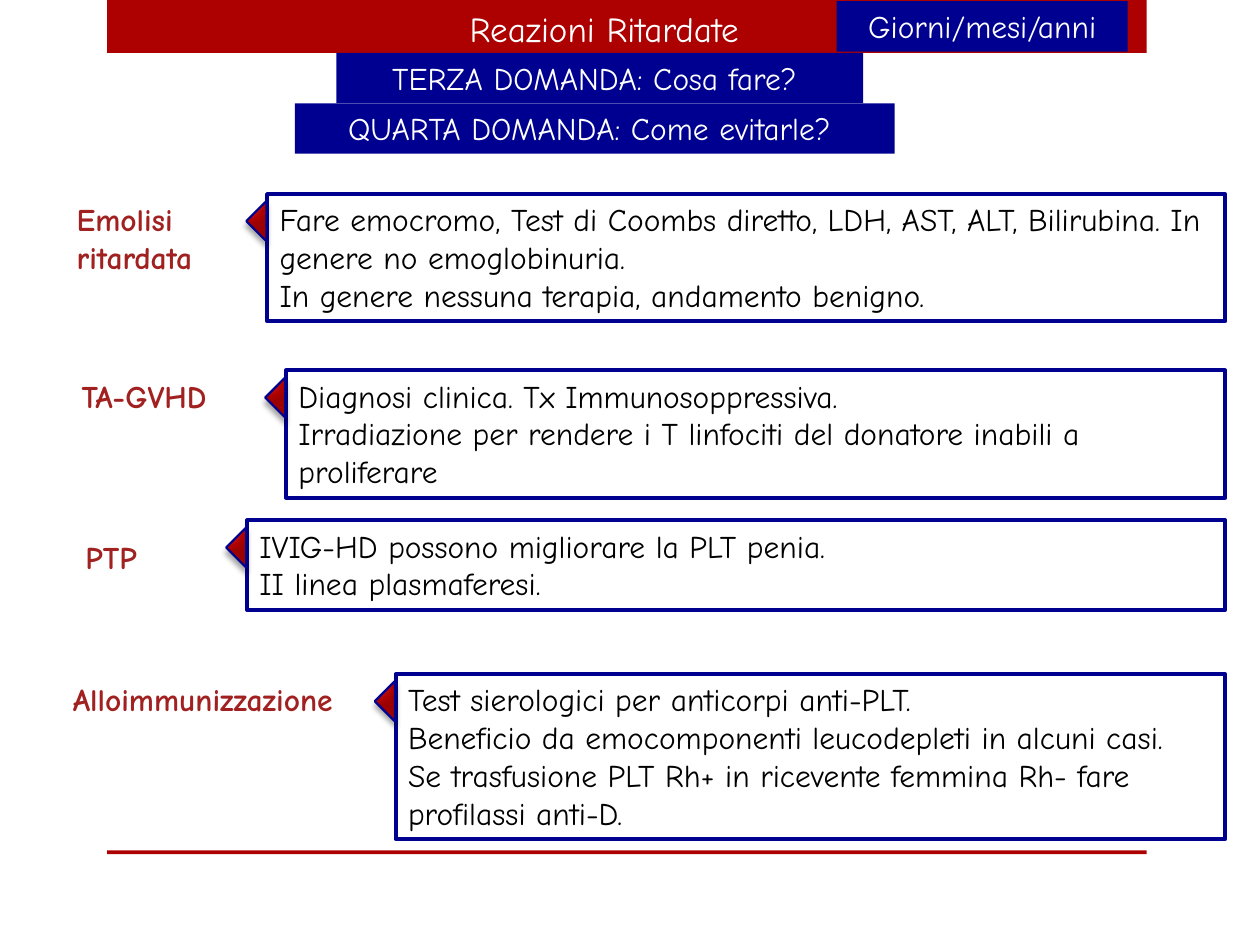
from lxml.etree import fromstring
from pptx import Presentation
from pptx.dml.color import RGBColor
from pptx.enum.shapes import MSO_SHAPE
from pptx.enum.text import MSO_ANCHOR, MSO_AUTO_SIZE, PP_ALIGN
from pptx.util import Inches, Pt

FONT = "Comic Neue"
RED, NAVY, LABEL_RED, WHITE, BLACK = "AD0101", "000090", "A12121", "FFFFFF", "000000"
NAMESPACE = 'xmlns:a="http://schemas.openxmlformats.org/drawingml/2006/main"'

presentation = Presentation()
presentation.slide_width, presentation.slide_height = Inches(10), Inches(7.5)
slide = presentation.slides.add_slide(presentation.slide_layouts[6])

# Grid of 100 columns by 75 rows
COLUMN = presentation.slide_width / 100
ROW = presentation.slide_height / 75


def add_block(left, top, width, height, fill=None, line=None, line_width=2.25,
              kind=MSO_SHAPE.RECTANGLE):
    """Place a shape on the grid, or a text box when there is no fill."""
    frame = [int(left * COLUMN), int(top * ROW), int(width * COLUMN), int(height * ROW)]
    if fill is None:
        return slide.shapes.add_textbox(*frame)
    shape = slide.shapes.add_shape(kind, *frame)
    shape.shadow.inherit = False
    shape.fill.solid()
    shape.fill.fore_color.rgb = RGBColor.from_string(fill)
    if line:
        shape.line.color.rgb = RGBColor.from_string(line)
        shape.line.width = Pt(line_width)
    else:
        shape.line.fill.background()
    return shape


def write(shape, text, color, size=18, bold=False, align=PP_ALIGN.LEFT):
    text_frame = shape.text_frame
    text_frame.text = text
    text_frame.word_wrap = True
    text_frame.auto_size = MSO_AUTO_SIZE.SHAPE_TO_FIT_TEXT
    text_frame.vertical_anchor = MSO_ANCHOR.TOP
    for paragraph in text_frame.paragraphs:
        paragraph.alignment = align
        for run in paragraph.runs:
            run.font.name = FONT
            run.font.size = Pt(size)
            run.font.bold = bold
            run.font.color.rgb = RGBColor.from_string(color)


# Red band at the top and rule at the bottom
for top, height in [(0, 4.2), (67.5, 0.3)]:
    add_block(8.5, top, 82.5, height, RED)

# Title and navy banners
write(add_block(36.3, 0.1, 28.3, 4.4), "Reazioni Ritardate", WHITE, size=20)
banners = [
    (66.4, 0.1, 23.1, "Giorni/mesi/anni"),
    (26.7, 4.2, 41.8, "TERZA DOMANDA: Cosa fare? "),
    (23.4, 8.2, 47.6, "QUARTA DOMANDA: Come evitarle? "),
]
for left, top, width, text in banners:
    write(add_block(left, top, width, 4, NAVY), text, WHITE, align=PP_ALIGN.CENTER)

# Reactions: label (left, top, width, height, text), then box (left, top, height, lines)
reactions = [
    ((5.1, 15.4, 15.2, 7.1, "Emolisi ritardata"),
     (21.2, 15.4, 10.1, [
         "Fare emocromo, Test di Coombs diretto, LDH, AST, ALT, Bilirubina. "
         "In genere no emoglobinuria.",
         "In genere nessuna terapia, andamento benigno."])),
    ((5.5, 29.4, 15.2, 4, "TA-GVHD"),
     (22.7, 29.4, 10.1, [
         "Diagnosi clinica. Tx Immunosoppressiva.",
         "Irradiazione per rendere i T linfociti del donatore inabili a proliferare"])),
    ((5.8, 42.2, 15.2, 4, "PTP"),
     (19.6, 41.3, 7.1, [
         "IVIG-HD possono migliorare la PLT penia.",
         "II linea plasmaferesi."])),
    ((4.8, 53.5, 25.7, 4, "Alloimmunizzazione"),
     (31.4, 53.5, 13.1, [
         "Test sierologici per anticorpi anti-PLT.",
         "Beneficio da emocomponenti leucodepleti in alcuni casi.",
         "Se trasfusione PLT Rh+ in ricevente femmina Rh- fare profilassi anti-D."])),
]
BOX_RIGHT = 97.25
POINTER_BASE, POINTER_DEPTH = 3.2, 1.6
POINTER_GRADIENT = f"""<a:gradFill {NAMESPACE} rotWithShape="1"><a:gsLst>
<a:gs pos="0"><a:srgbClr val="E62F2F"/></a:gs>
<a:gs pos="76000"><a:srgbClr val="AD0101"/></a:gs>
<a:gs pos="100000"><a:srgbClr val="9C0101"/></a:gs></a:gsLst>
<a:path path="circle"><a:fillToRect l="15000" t="15000" r="100000" b="100000"/></a:path>
</a:gradFill>"""
POINTER_SHADOW = f"""<a:outerShdw {NAMESPACE} blurRad="38100" dist="38100" dir="5400000"
rotWithShape="0"><a:srgbClr val="000000"><a:alpha val="35000"/></a:srgbClr></a:outerShdw>"""

for (*label_frame, label), (left, top, height, lines) in reactions:
    write(add_block(*label_frame), label, LABEL_RED, bold=True)
    box = add_block(left, top, BOX_RIGHT - left, height, WHITE, NAVY)
    write(box, "\n".join(lines), BLACK)

    # Pointer: triangle turned to the left, touching the box edge
    pointer = add_block(left - 0.85 - POINTER_BASE / 2, top + 2.15 - POINTER_DEPTH / 2,
                        POINTER_BASE, POINTER_DEPTH, RED, NAVY, 1.25,
                        MSO_SHAPE.ISOSCELES_TRIANGLE)
    pointer.rotation = 270
    properties = pointer.element.spPr
    solid = properties.find("{*}solidFill")
    properties.replace(solid, fromstring(POINTER_GRADIENT))
    properties.find("{*}effectLst").append(fromstring(POINTER_SHADOW))

presentation.save("out.pptx")
